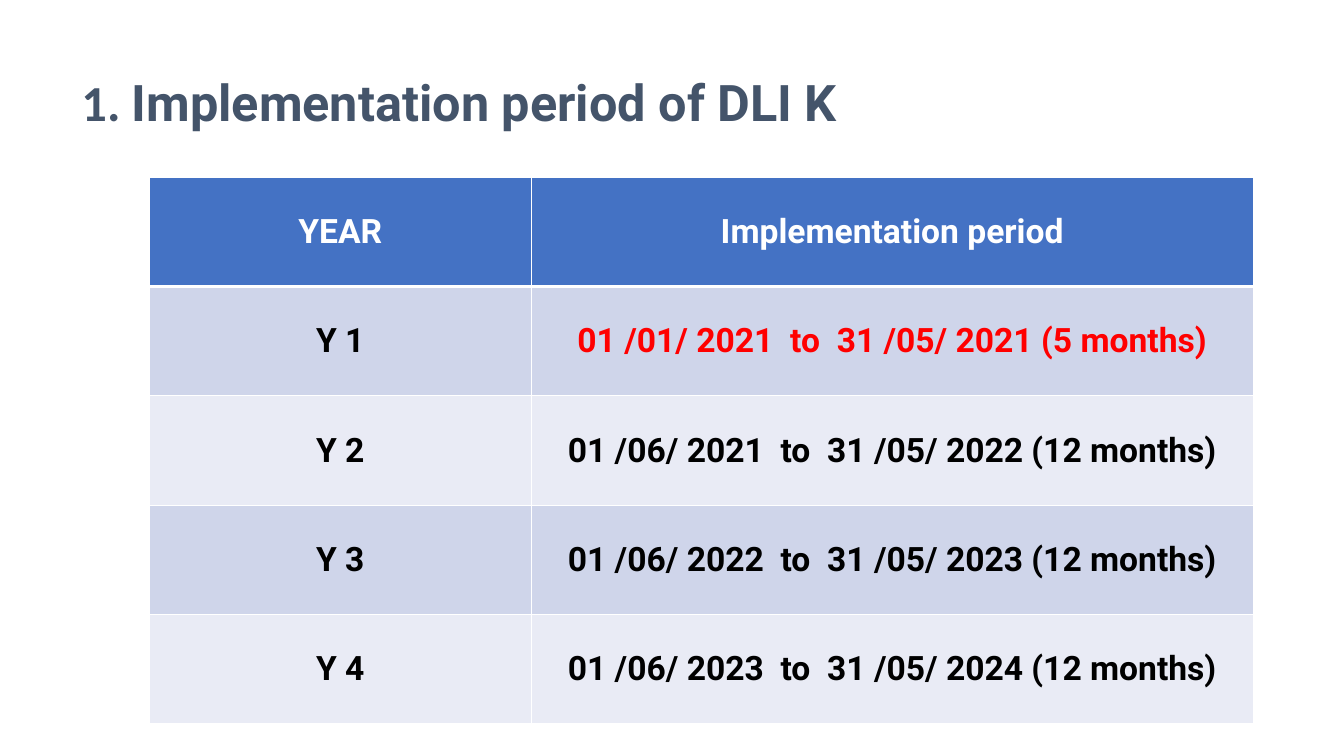
"""Build the slide listing the implementation periods of DLI K."""
from dataclasses import dataclass

from lxml.etree import SubElement
from pptx import Presentation
from pptx.dml.color import RGBColor
from pptx.enum.text import MSO_ANCHOR, PP_ALIGN
from pptx.oxml.ns import qn
from pptx.slide import Slide
from pptx.table import _Cell
from pptx.text.text import _Run
from pptx.util import Emu, Pt

EMU_PER_PX = 9144
WHITE = RGBColor(0xFF, 0xFF, 0xFF)
BLACK = RGBColor(0x00, 0x00, 0x00)
RED = RGBColor(0xFF, 0x00, 0x00)
SLATE = RGBColor(0x44, 0x54, 0x6A)
BLUE = RGBColor(0x44, 0x72, 0xC4)
BAND_DARK = RGBColor(0xCF, 0xD5, 0xEA)
BAND_LIGHT = RGBColor(0xE9, 0xEB, 0xF5)

COLUMN_WIDTHS = (379, 716)
ROW_HEIGHT = 108.4


@dataclass(frozen=True)
class PeriodRow:
    """One table row with its colours and border widths in points."""

    year: str
    period: str
    fill: RGBColor
    period_color: RGBColor = BLACK
    year_color: RGBColor = BLACK
    top: int = 1
    bottom: int = 1


ROWS = (
    PeriodRow("YEAR", "Implementation period", BLUE, WHITE, WHITE, bottom=3),
    PeriodRow("Y 1", "01 /01/ 2021  to  31 /05/ 2021 (5 months)", BAND_DARK, RED, top=3),
    PeriodRow("Y 2", "01 /06/ 2021  to  31 /05/ 2022 (12 months)", BAND_LIGHT),
    PeriodRow("Y 3", "01 /06/ 2022  to  31 /05/ 2023 (12 months)", BAND_DARK),
    PeriodRow("Y 4", "01 /06/ 2023  to  31 /05/ 2024 (12 months)", BAND_LIGHT),
)


def px(length: float) -> Emu:
    """Turn a length in px into EMU."""
    return Emu(round(length * EMU_PER_PX))


def format_run(run: _Run, font_name: str, size: int, color: RGBColor) -> None:
    """Give a run its bold font, size and colour."""
    run.font.name = font_name
    run.font.size = Pt(size)
    run.font.bold = True
    run.font.color.rgb = color


def set_borders(cell: _Cell, top: int, bottom: int) -> None:
    """Draw white borders around a cell that has no fill yet."""
    properties = cell._tc.get_or_add_tcPr()
    for side, width in (("L", 1), ("R", 1), ("T", top), ("B", bottom)):
        line = SubElement(properties, qn(f"a:ln{side}"), w=str(Pt(width)))
        fill = SubElement(line, qn("a:solidFill"))
        SubElement(fill, qn("a:srgbClr"), val=str(WHITE))


def fill_cell(cell: _Cell, text: str, color: RGBColor, row: PeriodRow) -> None:
    """Write and style one table cell."""
    set_borders(cell, row.top, row.bottom)
    cell.fill.solid()
    cell.fill.fore_color.rgb = row.fill
    cell.vertical_anchor = MSO_ANCHOR.MIDDLE
    cell.text_frame.text = text
    paragraph = cell.text_frame.paragraphs[0]
    paragraph.alignment = PP_ALIGN.CENTER
    format_run(paragraph.runs[0], "Roboto", 24, color)


def add_title(slide: Slide) -> None:
    """Add the numbered heading."""
    title = slide.shapes.add_textbox(px(71), px(54), px(1191), px(100))
    title.text_frame.word_wrap = True
    title.text_frame.vertical_anchor = MSO_ANCHOR.MIDDLE
    paragraph = title.text_frame.paragraphs[0]
    paragraph.line_spacing = 0.9
    for text, font_name in (("1. ", "Calibri"), ("Implementation period of DLI K", "Roboto")):
        run = paragraph.add_run()
        run.text = text
        format_run(run, font_name, 36, SLATE)


def add_period_table(slide: Slide) -> None:
    """Add the table of years and periods."""
    frame = slide.shapes.add_table(
        len(ROWS), len(COLUMN_WIDTHS), px(148), px(176),
        px(sum(COLUMN_WIDTHS)), px(ROW_HEIGHT * len(ROWS)),
    )
    table = frame.table
    for column, width in zip(table.columns, COLUMN_WIDTHS):
        column.width = px(width)
    for table_row, row in zip(table.rows, ROWS):
        table_row.height = px(ROW_HEIGHT)
        year_cell, period_cell = table_row.cells
        fill_cell(year_cell, row.year, row.year_color, row)
        fill_cell(period_cell, row.period, row.period_color, row)


def main() -> None:
    """Create and save the presentation."""
    presentation = Presentation()
    presentation.slide_width = px(1333)
    presentation.slide_height = px(750)
    slide = presentation.slides.add_slide(presentation.slide_layouts[6])
    add_title(slide)
    add_period_table(slide)
    presentation.save("out.pptx")


if __name__ == "__main__":
    main()
